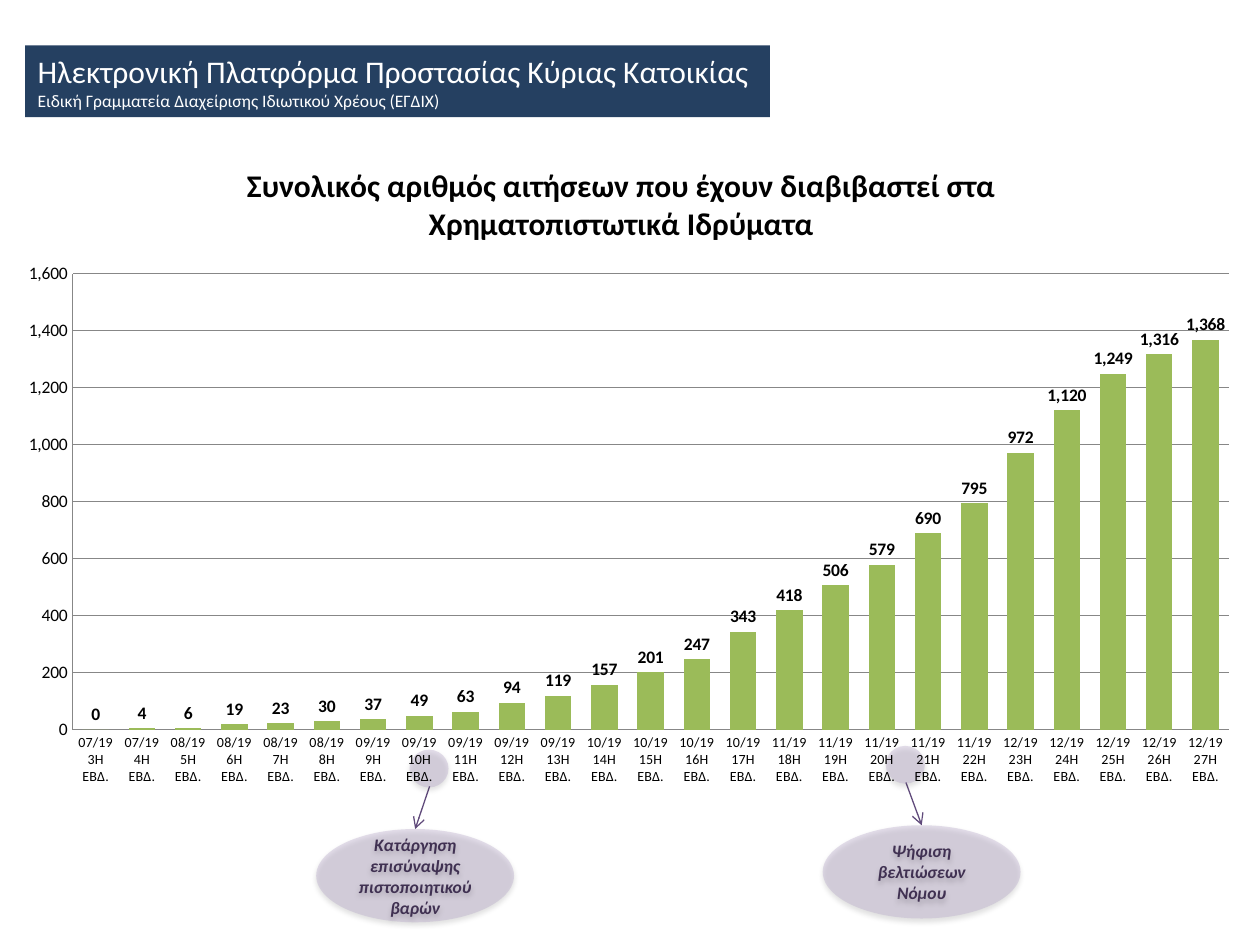
from lxml import etree
from pptx import Presentation
from pptx import util as u
from pptx.chart.data import CategoryChartData
from pptx.dml.color import RGBColor
from pptx.enum import chart as charts, shapes, text
from pptx.oxml import parse_xml
from pptx.oxml.ns import nsdecls, qn

COLORS = {"banner": "254061", "white": "FFFFFF", "black": "000000", "bar": "9BBB59",
          "grid": "878787", "bubble": "B3A2C7", "arrow": "604A7B", "note": "403152"}
FONT = "Calibri"
BANNER = [("Ηλεκτρονική Πλατφόρμα Προστασίας Κύριας Κατοικίας", 18),
          ("Ειδική Γραμματεία Διαχείρισης Ιδιωτικού Χρέους (ΕΓΔΙΧ)", 10)]
TITLE = "Συνολικός αριθμός αιτήσεων που έχουν διαβιβαστεί στα Χρηματοπιστωτικά Ιδρύματα"
FIRST_WEEK = 3
WEEKLY_TOTALS = [  # month, running total at the end of each of its weeks
    ("07/19", [0, 4]),
    ("08/19", [6, 19, 23, 30]),
    ("09/19", [37, 49, 63, 94, 119]),
    ("10/19", [157, 201, 247, 343]),
    ("11/19", [418, 506, 579, 690, 795]),
    ("12/19", [972, 1120, 1249, 1316, 1368]),
]
CALLOUTS = [  # text, marker corner, balloon corner, arrow start
    ("Κατάργηση επισύναψης πιστοποιητικού βαρών", (3.25, 5.95), (2.51, 6.58), (3.41, 6.24)),
    ("Ψήφιση βελτιώσεων Νόμου", (7.03, 5.92), (6.53, 6.55), (7.19, 6.21)),
]
MARKER_SIZE = (0.31, 0.3)
BALLOON_SIZE = (1.57, 0.74)
CHART_BOX = (0.04, 1.07, 9.92, 5.27)
PLOT_BOX = (0.58, 2.17, 9.18, 3.62)
TITLE_CORNER = (1.91, 1.25)


def rgb(name):
    return RGBColor.from_string(COLORS[name])


def inches(*values):
    return [u.Inches(value) for value in values]


def style_font(font, color, **values):
    font.name = FONT
    font.color.rgb = rgb(color)
    for name, value in values.items():
        setattr(font, name, value)


def add_filled(parent, kind, box, color):
    shape = parent.add_shape(kind, *inches(*box))
    shape.shadow.inherit = False
    shape.fill.solid()
    shape.fill.fore_color.rgb = rgb(color)
    shape.line.fill.background()
    return shape


def add_banner(slide):
    banner = add_filled(slide.shapes, shapes.MSO_SHAPE.RECTANGLE, (0.2, 0.36, 5.91, 0.57), "banner")
    frame = banner.text_frame
    frame.word_wrap = False
    for index, (line, size) in enumerate(BANNER):
        paragraph = frame.add_paragraph() if index else frame.paragraphs[0]
        paragraph.alignment = text.PP_ALIGN.LEFT
        run = paragraph.add_run()
        run.text = line
        style_font(run.font, "white", size=u.Pt(size))


def add_bubble(parent, corner, size):
    """Add a translucent ellipse with a soft shadow below it."""
    bubble = add_filled(parent, shapes.MSO_SHAPE.OVAL, (*corner, *size), "bubble")
    properties = bubble.element.spPr
    fill_color = properties.find(f"{qn('a:solidFill')}/{qn('a:srgbClr')}")
    etree.SubElement(fill_color, qn("a:alpha"), val="34000")
    properties.find(qn("a:effectLst")).append(parse_xml(
        f'<a:outerShdw {nsdecls("a")} blurRad="{u.Pt(3.1)}" dist="{u.Pt(1.8)}" dir="5400000" '
        f'rotWithShape="0"><a:srgbClr val="{COLORS["black"]}"><a:alpha val="35000"/></a:srgbClr>'
        '</a:outerShdw>'))
    return bubble


def add_callout(slide, words, marker, balloon, start):
    group = slide.shapes.add_group_shape().shapes
    end = (balloon[0] + BALLOON_SIZE[0] / 2, balloon[1])
    arrow = group.add_connector(shapes.MSO_CONNECTOR.STRAIGHT, *inches(*start, *end))
    arrow.line.color.rgb = rgb("arrow")
    arrow.line.width = u.Pt(0.75)
    etree.SubElement(arrow.line._get_or_add_ln(), qn("a:tailEnd"), type="arrow")
    etree.SubElement(arrow.element.spPr, qn("a:effectLst"))

    add_bubble(group, marker, MARKER_SIZE)
    frame = add_bubble(group, balloon, BALLOON_SIZE).text_frame
    frame.word_wrap = True
    frame.vertical_anchor = text.MSO_ANCHOR.MIDDLE
    paragraph = frame.paragraphs[0]
    paragraph.alignment = text.PP_ALIGN.CENTER
    run = paragraph.add_run()
    run.text = words
    style_font(run.font, "note", size=u.Pt(10), bold=True, italic=True)


def manual_layout(corner, size=None):
    """Return a chart layout for a place given in slide inches."""
    left, top, width, height = CHART_BOX
    values = {"x": (corner[0] - left) / width, "y": (corner[1] - top) / height}
    target = ""
    if size:
        target = '<c:layoutTarget val="inner"/>'
        values.update(w=size[0] / width, h=size[1] / height)
    modes = "".join(f'<c:{name}Mode val="edge"/>' for name in "xy")
    places = "".join(f'<c:{name} val="{value:.3f}"/>' for name, value in values.items())
    return parse_xml(f'<c:layout {nsdecls("c")}><c:manualLayout>{target}{modes}{places}'
                     '</c:manualLayout></c:layout>')


def set_layout(parent, position, layout):
    for old in parent.findall(qn("c:layout")):
        parent.remove(old)
    parent.insert(position, layout)


def add_totals_chart(slide):
    data = CategoryChartData(number_format="#,##0")
    months = [month for month, totals in WEEKLY_TOTALS for _ in totals]
    data.categories = [f"{month}\n{week}Η ΕΒΔ." for week, month in enumerate(months, FIRST_WEEK)]
    data.add_series(TITLE, [total for _, totals in WEEKLY_TOTALS for total in totals])
    chart = slide.shapes.add_chart(
        charts.XL_CHART_TYPE.COLUMN_CLUSTERED, *inches(*CHART_BOX), data).chart
    style_font(chart.font, "black", size=u.Pt(10))
    chart.has_legend = False
    chart.has_title = True
    title_frame = chart.chart_title.text_frame
    title_frame.text = TITLE
    style_font(title_frame.paragraphs[0].runs[0].font, "black", size=u.Pt(18), bold=True)

    plot = chart.plots[0]
    plot.gap_width = 75
    plot.vary_by_categories = False
    bar_fill = plot.series[0].format.fill
    bar_fill.solid()
    bar_fill.fore_color.rgb = rgb("bar")
    plot.has_data_labels = True
    labels = plot.data_labels
    label_values = {"show_value": True, "number_format": "#,##0", "number_format_is_linked": False,
                    "position": charts.XL_LABEL_POSITION.OUTSIDE_END}
    for name, value in label_values.items():
        setattr(labels, name, value)
    style_font(labels.font, "black", size=u.Pt(10), bold=True)

    for axis, size in ((chart.category_axis, 8), (chart.value_axis, 10)):
        axis.major_tick_mark = axis.minor_tick_mark = charts.XL_TICK_MARK.NONE
        style_font(axis.tick_labels.font, "black", size=u.Pt(size))
        axis.format.line.color.rgb = rgb("grid")
    value_axis = chart.value_axis
    value_axis.minimum_scale, value_axis.maximum_scale, value_axis.major_unit = 0, 1600, 200
    value_axis.tick_labels.number_format = "#,##0"
    value_axis.tick_labels.number_format_is_linked = False
    value_axis.major_gridlines.format.line.color.rgb = rgb("grid")

    space = chart.element
    set_layout(space.find(f".//{qn('c:plotArea')}"), 0, manual_layout(PLOT_BOX[:2], PLOT_BOX[2:]))
    set_layout(space.find(f".//{qn('c:title')}"), 1, manual_layout(TITLE_CORNER))
    # A clear background lets the markers show behind the week labels.
    space.find(qn("c:txPr")).addprevious(parse_xml(
        f'<c:spPr {nsdecls("c", "a")}><a:noFill/><a:ln><a:noFill/></a:ln></c:spPr>'))


def main():
    presentation = Presentation()
    presentation.slide_width, presentation.slide_height = inches(10, 7.5)
    slide = presentation.slides.add_slide(presentation.slide_layouts[6])
    add_banner(slide)
    for callout in CALLOUTS:
        add_callout(slide, *callout)
    add_totals_chart(slide)
    presentation.save("out.pptx")


if __name__ == "__main__":
    main()
